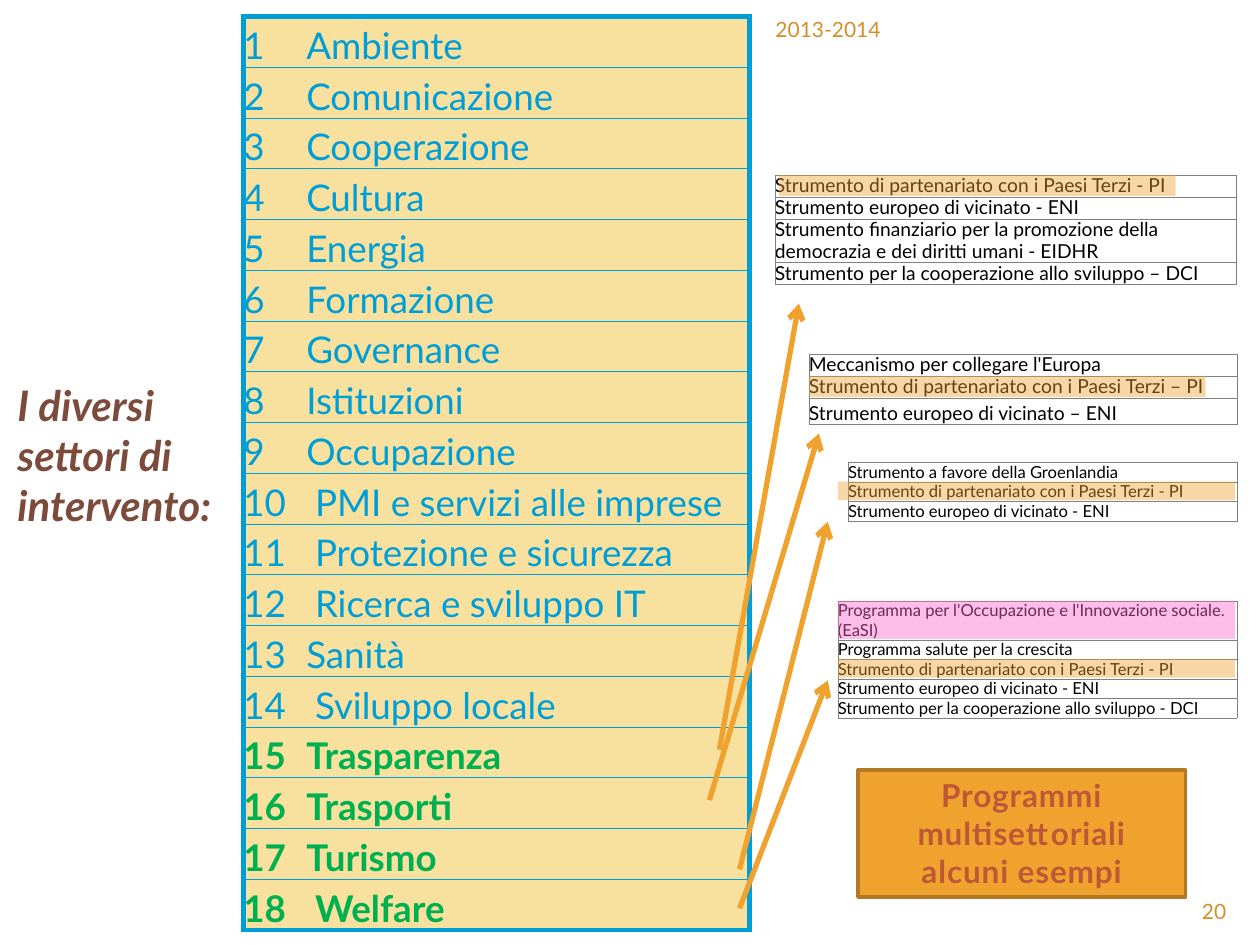
from lxml.etree import SubElement
from pptx import Presentation
from pptx.dml.color import RGBColor
from pptx.enum.shapes import MSO_CONNECTOR, MSO_SHAPE
from pptx.enum.text import MSO_ANCHOR, MSO_AUTO_SIZE, PP_ALIGN
from pptx.oxml.ns import qn
from pptx.util import Pt

FONT = "Lato"
BLUE = RGBColor(0x00, 0x9E, 0xD6)
GREEN = RGBColor(0x00, 0xB0, 0x50)
SAND = RGBColor(0xF8, 0xE1, 0x9F)
BROWN = RGBColor(0x7C, 0x4B, 0x3B)
ORANGE = RGBColor(0xF0, 0xA2, 0x2E)
DARK_ORANGE = RGBColor(0xB2, 0x78, 0x22)
OCHRE = RGBColor(0xD4, 0x8F, 0x29)
RUST = RGBColor(0xBD, 0x58, 0x36)
PINK = RGBColor(0xFF, 0x66, 0xCC)
GREY = RGBColor(0x80, 0x80, 0x80)
BLACK = RGBColor(0, 0, 0)

# Content
SECTORS = ["Ambiente", "Comunicazione", "Cooperazione", "Cultura", "Energia",
           "Formazione", "Governance", "Istituzioni", "Occupazione",
           "PMI e servizi alle imprese", "Protezione e sicurezza",
           "Ricerca e sviluppo IT", "Sanità", "Sviluppo locale",
           "Trasparenza", "Trasporti", "Turismo", "Welfare"]
FIRST_GREEN = 15
WIDE_INDENT = {10, 11, 12, 14, 18}
SECTORS_LEFT, SECTORS_TOP, SECTORS_WIDTH, SECTOR_HEIGHT = 139, 9.4, 289.4, 29

# Each row is (text, number of lines, highlight colour)
PARTNERSHIP = "Strumento di partenariato con i Paesi Terzi - PI"
NEIGHBOURHOOD = "Strumento europeo di vicinato - ENI"
PROGRAMMES = [
    {"at": (442.8, 100, 263.5), "size": 11, "leading": 12.5, "mark_left": 445,
     "arrow": ((411.1, 428.4), (456.5, 173.5)),
     "rows": [
         (PARTNERSHIP, 1, ORANGE),
         (NEIGHBOURHOOD, 1, None),
         ("Strumento finanziario per la promozione della democrazia "
          "e dei diritti umani - EIDHR", 2, None),
         ("Strumento per la cooperazione allo sviluppo – DCI", 1, None)]},
    {"at": (462.2, 202.3, 244.8), "size": 11, "leading": 12.5, "mark_left": 462.2,
     "last_spacing": 1.15,
     "arrow": ((405.4, 457.2), (468, 247.7)),
     "rows": [
         ("Meccanismo per collegare l'Europa", 1, None),
         ("Strumento di partenariato con i Paesi Terzi – PI", 1, ORANGE),
         ("Strumento europeo di vicinato – ENI", 1, None)]},
    {"at": (484.6, 264.2, 222.5), "size": 9.5, "leading": 11.1, "mark_left": 478.8,
     "arrow": ((422.6, 496.8), (473, 298.1)),
     "rows": [
         ("Strumento a favore della Groenlandia", 1, None),
         (PARTNERSHIP, 1, ORANGE),
         (NEIGHBOURHOOD, 1, None)]},
    {"at": (478.8, 343.4, 228.2), "size": 9.5, "leading": 11.1, "mark_left": 478.8,
     "arrow": ((422.6, 519.1), (473, 388.8)),
     "rows": [
         ("Programma per l'Occupazione e l'Innovazione sociale. (EaSI)", 2, PINK),
         ("Programma salute per la crescita", 1, None),
         (PARTNERSHIP, 1, ORANGE),
         (NEIGHBOURHOOD, 1, None),
         ("Strumento per la cooperazione allo sviluppo - DCI", 1, None)]},
]
MARK_WIDTH = 226.8

prs = Presentation()
prs.slide_width, prs.slide_height = Pt(720), Pt(540)
slide = prs.slides.add_slide(prs.slide_layouts[6])
shapes = slide.shapes


def style(paragraph, size, color, bold=False, italic=False):
    font = paragraph.font
    font.name, font.size, font.bold, font.italic = FONT, Pt(size), bold, italic
    font.color.rgb = color


def add_column(left, top, width, heights):
    """Add an unstyled one-column table and return its cells."""
    table = shapes.add_table(len(heights), 1, Pt(left), Pt(top), Pt(width),
                             Pt(sum(heights))).table
    table.first_row = table.horz_banding = False
    for row, height in zip(table.rows, heights):
        row.height = Pt(height)
    cells = [row.cells[0] for row in table.rows]
    for cell in cells:
        cell.margin_left = cell.margin_right = 0
        cell.margin_top = cell.margin_bottom = 0
    return cells


def set_borders(cell, color, left, right, top, bottom):
    props = cell._tc.get_or_add_tcPr()
    for side, width in zip("LRTB", (left, right, top, bottom)):
        line = SubElement(props, qn(f"a:ln{side}"), w=str(Pt(width)))
        fill = SubElement(line, qn("a:solidFill"))
        SubElement(fill, qn("a:srgbClr"), val=str(color))


def number(paragraph, value, indent, color):
    props = paragraph._p.get_or_add_pPr()
    props.set("marL", str(Pt(indent)))
    props.set("indent", str(-Pt(indent)))
    bullet_color = SubElement(props, qn("a:buClr"))
    SubElement(bullet_color, qn("a:srgbClr"), val=str(color))
    SubElement(props, qn("a:buFont"), typeface=FONT)
    SubElement(props, qn("a:buAutoNum"), type="arabicPlain", startAt=str(value))


def add_box(left, top, width, height, color):
    box = shapes.add_shape(MSO_SHAPE.RECTANGLE, Pt(left), Pt(top), Pt(width), Pt(height))
    box.shadow.inherit = False
    box.fill.solid()
    box.fill.fore_color.rgb = color
    return box


def add_mark(left, top, height, color):
    mark = add_box(left, top, MARK_WIDTH, height, color)
    mark.line.fill.background()
    rgb = mark._element.spPr.find(qn("a:solidFill")).find(qn("a:srgbClr"))
    SubElement(rgb, qn("a:alpha"), val="42000")


def add_arrow(start, end):
    arrow = shapes.add_connector(MSO_CONNECTOR.STRAIGHT, *map(Pt, start + end))
    arrow.line.color.rgb, arrow.line.width = ORANGE, Pt(3)
    SubElement(arrow.line._get_or_add_ln(), qn("a:tailEnd"), type="arrow")
    SubElement(arrow._element.spPr, qn("a:effectLst"))


def add_label(text, left, top, width, height, size, color, align, **emphasis):
    frame = shapes.add_textbox(Pt(left), Pt(top), Pt(width), Pt(height)).text_frame
    frame.word_wrap = True
    frame.text = text
    frame.paragraphs[0].alignment = align
    style(frame.paragraphs[0], size, color, **emphasis)


# Numbered list of sectors
sector_cells = add_column(SECTORS_LEFT, SECTORS_TOP, SECTORS_WIDTH,
                          [SECTOR_HEIGHT] * len(SECTORS))
for position, (cell, sector) in enumerate(zip(sector_cells, SECTORS), 1):
    green = position >= FIRST_GREEN
    color = GREEN if green else BLUE
    cell.text = sector
    paragraph = cell.text_frame.paragraphs[0]
    paragraph.line_spacing = 1.15
    number(paragraph, position, 41 if position in WIDE_INDENT else 36, color)
    style(paragraph, 21, color, bold=green)
    set_borders(cell, BLUE, 3, 3, 3 if position == 1 else 0.5,
                3 if position == len(SECTORS) else 0.5)
    cell.fill.solid()
    cell.fill.fore_color.rgb = SAND

# Heading
add_label("I diversi settori di intervento:", 2.9, 213.1, 147.6, 94.3, 24, BROWN,
          PP_ALIGN.LEFT, bold=True, italic=True)

# Caption box
caption = add_box(490.3, 439.9, 187.2, 72.7, ORANGE)
caption.line.color.rgb, caption.line.width = DARK_ORANGE, Pt(2)
frame = caption.text_frame
frame.word_wrap, frame.auto_size = True, MSO_AUTO_SIZE.SHAPE_TO_FIT_TEXT
frame.vertical_anchor = MSO_ANCHOR.TOP
frame.text = "Programmi multisettoriali alcuni esempi"
frame.paragraphs[0].alignment = PP_ALIGN.CENTER
style(frame.paragraphs[0], 18, RUST, bold=True)
frame.paragraphs[0].runs[0].font._element.set("spc", "50")

# Programme tables, each with its arrow and highlights
for programme in PROGRAMMES:
    left, top, width = programme["at"]
    rows, leading = programme["rows"], programme["leading"]
    heights = [lines * leading for _, lines, _ in rows]
    cells = add_column(left, top, width, heights)
    for cell, (text, _, _) in zip(cells, rows):
        cell.text = text
        paragraph = cell.text_frame.paragraphs[0]
        paragraph.line_spacing = Pt(leading)
        style(paragraph, programme["size"], BLACK)
        set_borders(cell, GREY, 0.25, 0.25, 0.25, 0.25)
        cell.fill.background()
    if "last_spacing" in programme:
        paragraph.line_spacing = programme["last_spacing"]
    add_arrow(*programme["arrow"])
    for index, (_, _, color) in enumerate(rows):
        if color:
            add_mark(programme["mark_left"], top + sum(heights[:index]),
                     heights[index] - 0.5, color)

# Date and page number
add_label("2013-2014", 246.2, 5.8, 264.2, 23, 12, OCHRE, PP_ALIGN.RIGHT)
add_label("20", 648, 509.8, 59.8, 19.4, 12, OCHRE, PP_ALIGN.RIGHT)

prs.save("out.pptx")
